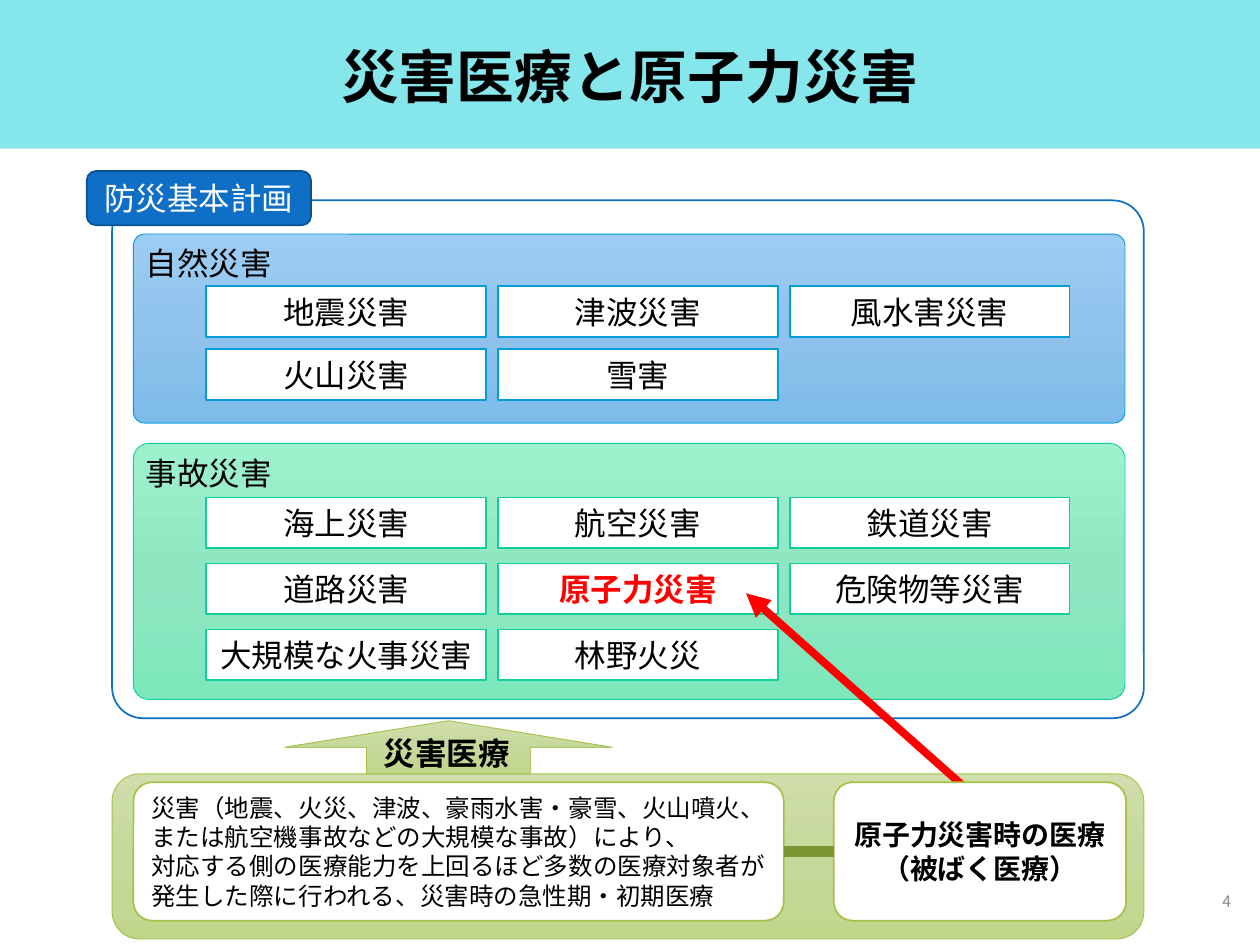
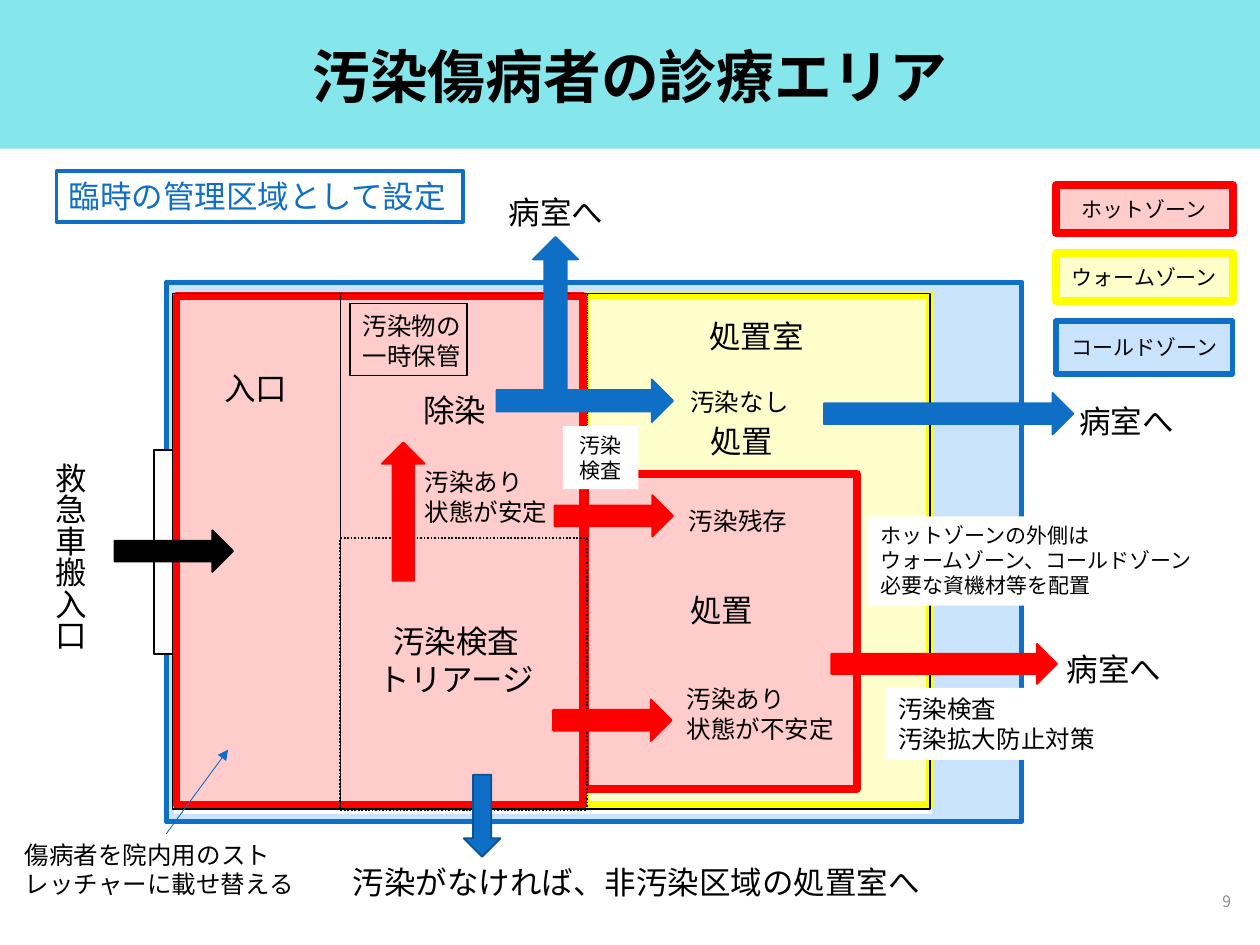
"""Build two slides on disaster medicine and the care area for contaminated patients."""
import copy
from dataclasses import dataclass
from typing import Any, Optional

import lxml.etree
import pptx
import pptx.dml.color
import pptx.enum.dml
import pptx.enum.shapes
import pptx.enum.text
import pptx.oxml.ns
import pptx.util

SHAPE = pptx.enum.shapes.MSO_SHAPE
ALIGN = pptx.enum.text.PP_ALIGN
ANCHOR = pptx.enum.text.MSO_ANCHOR
FIT = pptx.enum.text.MSO_AUTO_SIZE
qn = pptx.oxml.ns.qn


@dataclass(frozen=True)
class Theme:
    font: str = "Noto Sans CJK JP"
    title: float = 33
    body: float = 18
    strong: float = 16
    note: float = 14
    small: float = 12
    number: float = 9
    black: str = "000000"
    white: str = "FFFFFF"
    grey: str = "8C8C8C"
    band: str = "85E7EC"
    blue: str = "0F6FC6"
    navy: str = "0B5292"
    sky: str = "009DD9"
    mint: str = "10CF9B"
    olive: str = "A5C249"
    moss: str = "7E9632"
    red: str = "FF0000"
    yellow: str = "FFFF00"
    hot: str = "FFCCCC"
    warm: str = "FFFFCC"
    cold: str = "C8E3FB"
    sky_fade: tuple = ("9DCDF4", "90C3EC", "7CBBE9")
    mint_fade: tuple = ("9EF1CD", "91E6C2", "7CE8BC")
    olive_fade: tuple = ("CFDEAA", "C6D89C", "C0D68A")


THEME = Theme()


@dataclass(frozen=True)
class Box:
    """A shape, or a text box when kind is None; lengths are centimetres."""
    at: tuple
    text: str = ""
    kind: Any = None
    fill: Any = None
    line: Optional[str] = None
    weight: float = 1
    size: float = THEME.body
    color: str = THEME.black
    bold: bool = False
    align: Any = ALIGN.LEFT
    anchor: Any = ANCHOR.TOP
    wrap: bool = False
    radius: Optional[float] = None
    dotted: bool = False
    rotation: float = 0
    vertical: bool = False


@dataclass(frozen=True)
class Line:
    start: tuple
    end: tuple
    color: str = THEME.black
    weight: float = 0.5
    dotted: bool = False
    arrow: bool = False


def assign(target: Any, values: dict) -> None:
    """Set every attribute named in values."""
    for name, value in values.items():
        setattr(target, name, value)


def rgb(color: str) -> pptx.dml.color.RGBColor:
    """Turn a hex string into a colour."""
    return pptx.dml.color.RGBColor.from_string(color)


def lengths(values: tuple) -> list:
    """Turn centimetres into lengths."""
    return [pptx.util.Cm(value) for value in values]


def paint(shape: Any, fill: Any) -> None:
    """Fill a shape with one colour, a downward fade or nothing."""
    if fill is None:
        shape.fill.background()
    elif isinstance(fill, str):
        shape.fill.solid()
        shape.fill.fore_color.rgb = rgb(fill)
    else:
        shape.fill.gradient()
        shape.fill.gradient_angle = 270
        stops = shape._element.spPr.find(".//" + qn("a:gsLst"))
        stops.insert(1, copy.deepcopy(stops[0]))
        for index, stop in enumerate(shape.fill.gradient_stops):
            stop.color.rgb = rgb(fill[index])
            stop.position = index / 2


def stroke(line: Any, color: str, weight: float, dotted: bool) -> None:
    """Draw a line in a colour and weight."""
    line.color.rgb = rgb(color)
    line.width = pptx.util.Pt(weight)
    if dotted:
        line.dash_style = pptx.enum.dml.MSO_LINE.ROUND_DOT


def write(frame: Any, box: Box, spacing: Optional[float] = None) -> None:
    """Write one paragraph for each line of the box's text."""
    for index, words in enumerate(box.text.split("\n")):
        para = frame.add_paragraph() if index else frame.paragraphs[0]
        assign(para, {"alignment": box.align, "line_spacing": spacing})
        span = para.add_run()
        span.text = words
        assign(span.font, {"name": THEME.font, "size": pptx.util.Pt(box.size), "bold": box.bold})
        span.font.color.rgb = rgb(box.color)
        east = lxml.etree.SubElement(span._r.get_or_add_rPr(), qn("a:ea"))
        east.set("typeface", THEME.font)


def draw_box(page: Any, box: Box) -> Any:
    """Draw a box and return its shape."""
    if box.kind is None:
        shape = page.shapes.add_textbox(*lengths(box.at))
    else:
        shape = page.shapes.add_shape(box.kind, *lengths(box.at))
        shape.shadow.inherit = False
    if box.radius is not None:
        shape.adjustments[0] = box.radius
    shape.rotation = box.rotation
    paint(shape, box.fill)
    if box.line:
        stroke(shape.line, box.line, box.weight, box.dotted)
    else:
        shape.line.fill.background()
    if box.text:
        frame = shape.text_frame
        assign(frame, {"word_wrap": box.wrap, "vertical_anchor": box.anchor,
                       "auto_size": FIT.NONE if box.kind else FIT.SHAPE_TO_FIT_TEXT})
        if box.vertical:
            frame._txBody.bodyPr.set("vert", "eaVert")
        write(frame, box)
    return shape


def draw_line(page: Any, line: Line) -> None:
    """Draw a straight connector."""
    connector = page.shapes.add_connector(
        pptx.enum.shapes.MSO_CONNECTOR.STRAIGHT, *lengths(line.start + line.end))
    stroke(connector.line, line.color, line.weight, line.dotted)
    if line.arrow:
        tail = lxml.etree.SubElement(connector.line._get_or_add_ln(), qn("a:tailEnd"))
        tail.set("type", "triangle")
    lxml.etree.SubElement(connector._element.spPr, qn("a:effectLst"))


def draw_all(page: Any, items: list) -> None:
    """Draw boxes and lines from back to front."""
    for item in items:
        if isinstance(item, Line):
            draw_line(page, item)
        else:
            draw_box(page, item)


def panel(at: tuple, text: str = "", **style: Any) -> Box:
    """Describe a shape with middle-anchored, centred text."""
    return Box(at, text, **{"kind": SHAPE.RECTANGLE, "align": ALIGN.CENTER,
                            "anchor": ANCHOR.MIDDLE, "wrap": True, **style})


def rounded(at: tuple, text: str = "", **style: Any) -> Box:
    """Describe a panel with rounded corners."""
    return panel(at, text, kind=SHAPE.ROUNDED_RECTANGLE, **style)


def arrow(at: tuple, color: str, kind: Any = SHAPE.RIGHT_ARROW, **style: Any) -> Box:
    """Describe a block arrow in one colour."""
    return Box(at, kind=kind, **{"fill": color, "line": color, **style})


def add_page(deck: Any, title: str, number: str) -> Any:
    """Add a slide with its title and number."""
    page = deck.slides.add_slide(deck.slide_layouts[5])
    heading = page.shapes.title
    left, top, width, height = lengths((1.75, 0.53, 21.9, 2.16))
    assign(heading, {"left": left, "top": top, "width": width, "height": height})
    assign(heading.text_frame, {"vertical_anchor": ANCHOR.MIDDLE, "auto_size": FIT.NONE,
                                "word_wrap": True})
    write(heading.text_frame, Box((), title, size=THEME.title, bold=True, align=ALIGN.CENTER), 0.9)
    draw_box(page, Box((19.35, 17.65, 5.72, 1.02), number, size=THEME.number, color=THEME.grey,
                       align=ALIGN.RIGHT, anchor=ANCHOR.MIDDLE, wrap=True))
    return page


def disaster_group(name: str, top: float, height: float, first_row: float, pitch: float,
                   disasters: list, fade: tuple, edge: str) -> list:
    """Describe a group of disasters laid out in three columns."""
    items = [rounded((2.69, top, 19.99, height), radius=0.06, fill=fade, line=edge, weight=0.5),
             Box((2.69, top + 0.08, 3.07, 1.02), name)]
    for index, disaster in enumerate(disasters):
        row, column = divmod(index, 3)
        nuclear = disaster == "原子力災害"
        items.append(panel((4.16 + 5.88 * column, first_row + pitch * row, 5.64, 1.02), disaster,
                           fill=THEME.white, line=edge, bold=nuclear,
                           color=THEME.red if nuclear else THEME.black))
    return items


def build_disasters(page: Any) -> None:
    """Draw the disaster plan and the medicine that supports it."""
    natural = ["地震災害", "津波災害", "風水害災害", "火山災害", "雪害"]
    accidents = ["海上災害", "航空災害", "鉄道災害", "道路災害", "原子力災害", "危険物等災害",
                 "大規模な火事災害", "林野火災"]
    green = {"fill": THEME.olive_fade, "line": THEME.olive, "weight": 0.5}
    card = {"fill": THEME.white, "line": THEME.olive, "radius": 0.135}
    definition = ("災害（地震、火災、津波、豪雨水害・豪雪、火山噴火、または航空機事故などの大規模な事故）により、\n"
                  "対応する側の医療能力を上回るほど多数の医療対象者が発生した際に行われる、災害時の急性期・初期医療")
    draw_all(page, [
        rounded((2.26, 4.04, 20.8, 10.44), radius=0.06, fill=THEME.white, line=THEME.blue),
        rounded((1.75, 3.45, 4.52, 1.09), "防災基本計画", fill=THEME.blue, line=THEME.navy,
                color=THEME.white),
        *disaster_group("自然災害", 4.72, 3.81, 5.77, 1.27, natural, THEME.sky_fade, THEME.sky),
        *disaster_group("事故災害", 8.94, 5.16, 10.03, 1.33, accidents, THEME.mint_fade, THEME.mint),
        rounded((2.26, 15.6, 20.8, 3.33), **green),
        rounded((2.69, 15.77, 13.11, 2.79), definition, size=THEME.note, align=ALIGN.LEFT, **card),
        panel((5.74, 14.53, 6.6, 1.07), kind=SHAPE.UP_ARROW, **green),
        Box((7.49, 14.68, 3.07, 1.02), "災害医療", bold=True),
        Line((19.48, 15.9), (15.04, 11.96), THEME.red, 4.5, arrow=True),
        rounded((16.81, 15.77, 5.89, 2.79), "原子力災害時の医療\n（被ばく医療）", size=THEME.strong,
                bold=True, **card),
        Line((15.8, 17.17), (16.81, 17.17), THEME.moss, 6),
    ])


def build_care_area(page: Any) -> None:
    """Draw the zones, the patient flow and the legend."""
    hot = {"fill": THEME.hot, "line": THEME.red, "weight": 4.5}
    warm = {"fill": THEME.warm, "line": THEME.yellow, "weight": 4.5}
    cold = {"fill": THEME.cold, "line": THEME.blue, "weight": 3}
    note = {"size": THEME.note}
    legend = [("ホットゾーン", hot, 0.97), ("ウォームゾーン", warm, 0.97), ("コールドゾーン", cold, 1.07)]
    draw_all(page, [
        panel((3.35, 5.69, 17.25, 10.87), **cold),
        panel((3.51, 5.92, 15.27, 10.49), fill=THEME.white),
        panel((11.79, 5.94, 6.96, 10.29), **warm),
        panel((11.79, 9.55, 5.49, 6.35), **hot),
        panel((3.56, 5.97, 8.2, 10.26), **hot),
        Box((4.27, 7.32, 1.8, 1.02), "入口"),
        Box((0.25, 16.81, 6.2, 1.45), "傷病者を院内用のストレッチャーに載せ替える", wrap=True, **note),
        Box((8.28, 7.75, 1.8, 1.02), "除染"),
        Box((14.05, 6.27, 2.44, 1.02), "処置室"),
        Box((21.26, 12.98, 2.44, 1.02), "病室へ"),
        Box((6.86, 17.27, 12.07, 1.02), "汚染がなければ、非汚染区域の処置室へ"),
        panel((3.1, 9.07, 0.38, 4.11), fill=THEME.white, line=THEME.black),
        panel((6.86, 10.85, 4.98, 5.49), line=THEME.black, dotted=True),
        Box((7.34, 12.42, 3.71, 1.8), "汚染検査\nトリアージ", align=ALIGN.CENTER),
        Line((11.84, 5.92), (11.84, 10.41), dotted=True),
        Line((6.86, 5.92), (6.86, 16.31)),
        panel((7.06, 6.12, 2.36, 1.45), line=THEME.black),
        Box((7.06, 6.15, 2.79, 1.45), "汚染物の一時保管", wrap=True, **note),
        panel((3.48, 5.92, 15.27, 10.39), line=THEME.black),
        Line((3.35, 16.81), (4.6, 15.11), THEME.blue, arrow=True),
        arrow((9.35, 15.62, 0.74, 1.65), THEME.blue, SHAPE.DOWN_ARROW, line=THEME.navy),
        arrow((7.7, 8.92, 0.86, 2.79), THEME.red, SHAPE.UP_ARROW),
        Box((8.31, 9.3, 3, 1.45), "汚染あり\n状態が安定", **note),
        arrow((2.31, 10.69, 2.39, 0.84), THEME.black),
        Box((13.59, 13.67, 3.51, 1.45), "汚染あり\n状態が不安定", **note),
        arrow((11.15, 14.1, 2.39, 0.84), THEME.red),
        Box((17.5, 10.41, 7.01, 1.8),
            "ホットゾーンの外側は\nウォームゾーン、コールドゾーン\n必要な資機材等を配置",
            fill=THEME.white, size=THEME.small, wrap=True),
        Box((17.86, 13.87, 4.5, 1.45), "汚染検査\n汚染拡大防止対策", fill=THEME.white, **note),
        arrow((16.76, 12.98, 4.55, 0.81), THEME.red),
        Box((13.64, 10.08, 2.51, 0.86), "汚染残存", **note),
        arrow((11.18, 9.98, 2.39, 0.84), THEME.red),
        Box((0.66, 9.07, 1.27, 4.11), "救急車搬入口", vertical=True),
        Box((1.14, 3.45, 8.2, 1.02), "臨時の管理区域として設定", line=THEME.blue, weight=2.25,
            color=THEME.blue),
        *[panel((21.29, 3.73 + 1.37 * index, 3.56, height), name, size=THEME.small, wrap=False, **zone)
          for index, (name, zone, height) in enumerate(legend)],
        Box((13.67, 11.79, 2.62, 1.02), "処置", wrap=True),
        Box((11.35, 8.59, 1.52, 1.27), "汚染\n検査", fill=THEME.white, size=THEME.small,
            align=ALIGN.CENTER, wrap=True),
        arrow((10.01, 7.65, 3.56, 0.86), THEME.blue),
        Box((13.67, 7.67, 3.35, 0.86), "汚染なし", wrap=True, **note),
        Box((14.07, 8.38, 2.62, 1.02), "処置", wrap=True),
        arrow((16.61, 7.92, 5.03, 0.84), THEME.blue),
        Box((21.51, 7.98, 2.44, 1.02), "病室へ"),
        arrow((9.65, 5.87, 3.1, 0.91), THEME.blue, rotation=270),
        Box((10.01, 3.76, 2.44, 1.02), "病室へ"),
    ])


def main() -> None:
    """Build and save the deck."""
    deck = pptx.Presentation()
    assign(deck, {"slide_width": pptx.util.Cm(25.4), "slide_height": pptx.util.Cm(19.05)})
    disasters = add_page(deck, "災害医療と原子力災害", "4")
    band = draw_box(disasters, panel((0, 0, 25.4, 3), fill=THEME.band))
    deck.slide_layouts[5].shapes._spTree.insert(2, band._element)
    build_disasters(disasters)
    build_care_area(add_page(deck, "汚染傷病者の診療エリア", "9"))
    deck.save("out.pptx")


if __name__ == "__main__":
    main()
